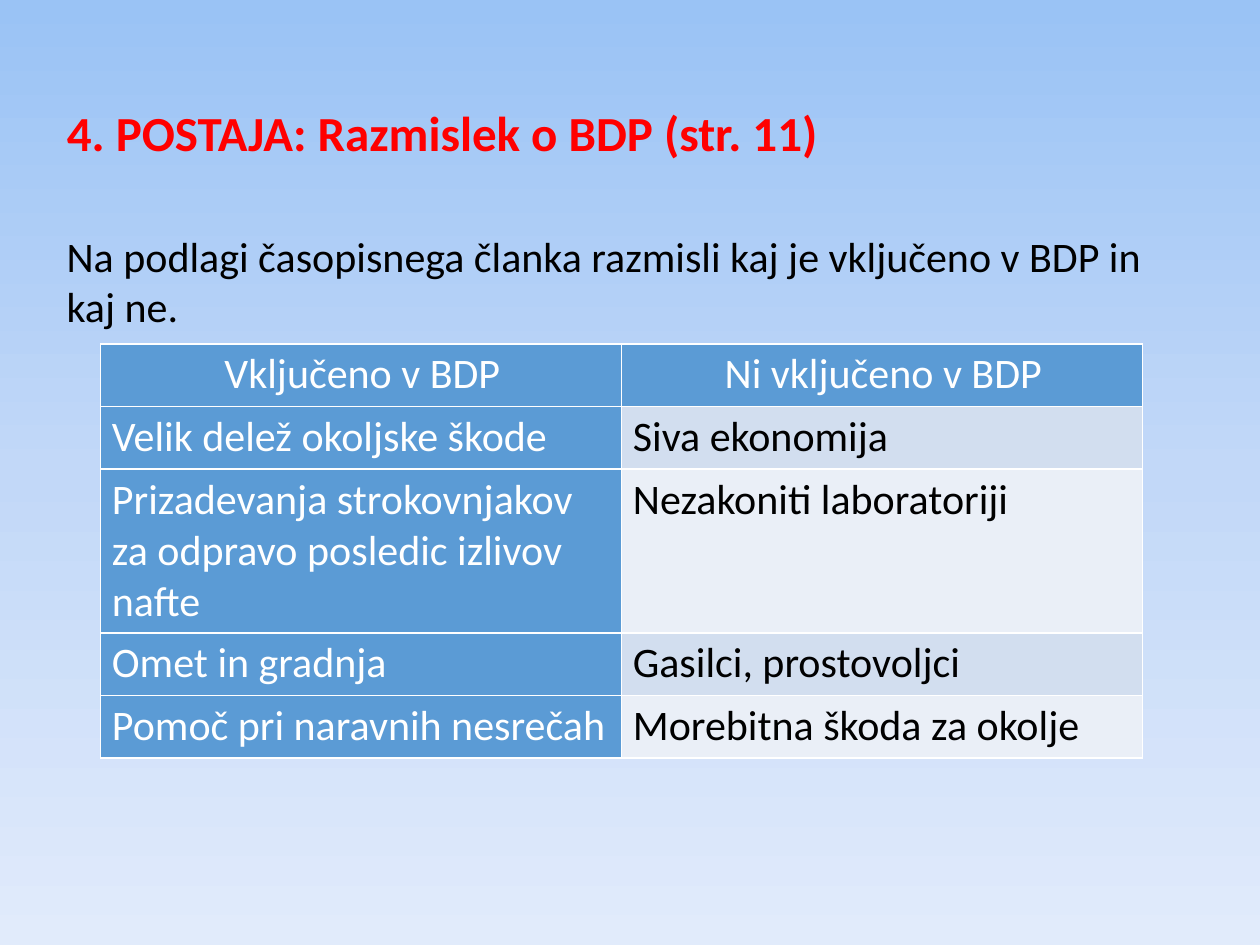
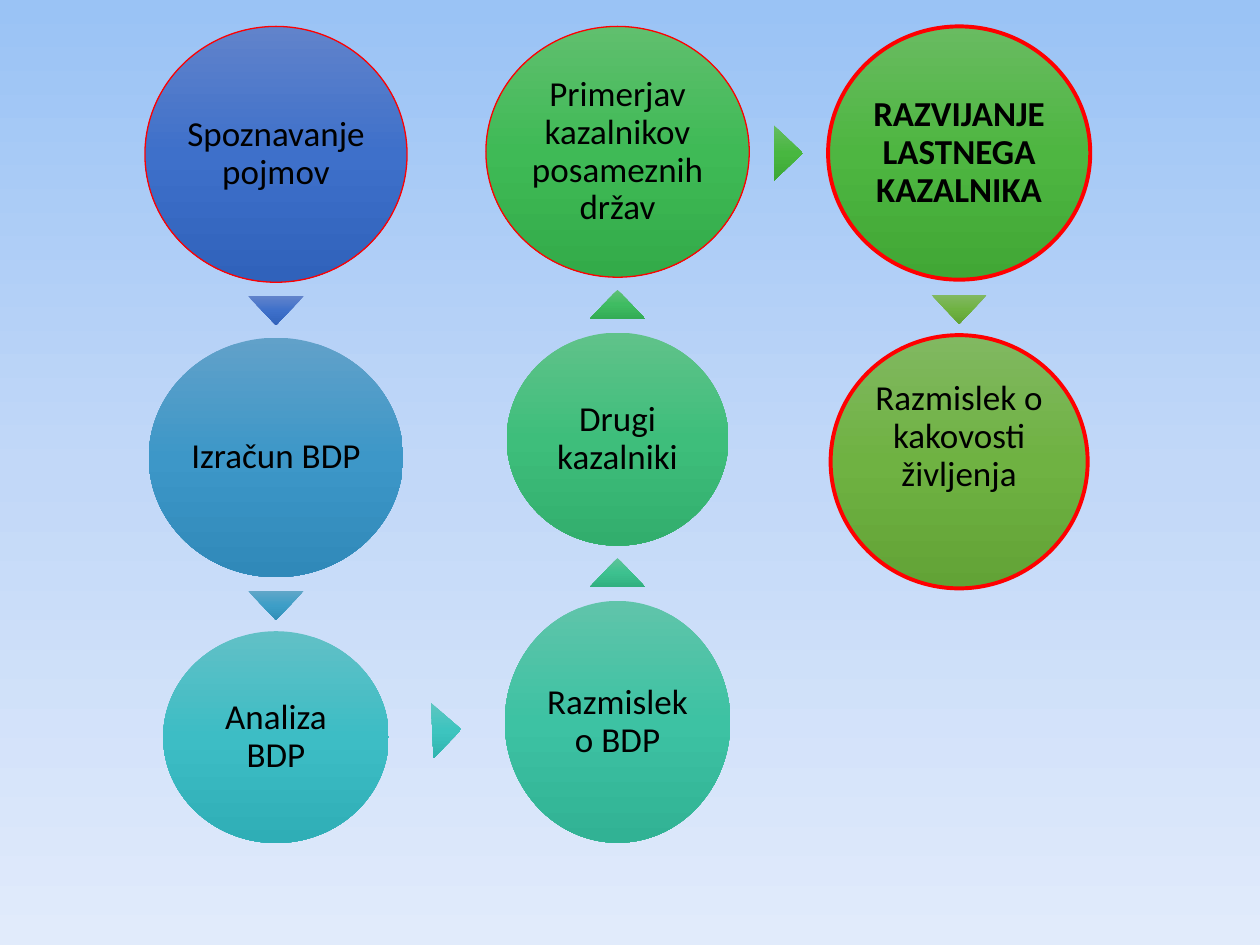
from copy import deepcopy
from dataclasses import dataclass

from lxml import etree
from pptx import Presentation
from pptx.dml.color import RGBColor
from pptx.enum.shapes import MSO_SHAPE
from pptx.enum.text import MSO_ANCHOR, MSO_AUTO_SIZE, PP_ALIGN
from pptx.oxml.ns import qn
from pptx.util import Pt

OVAL = MSO_SHAPE.OVAL
ARROW = MSO_SHAPE.ISOSCELES_TRIANGLE
TOP, MIDDLE = MSO_ANCHOR.TOP, MSO_ANCHOR.MIDDLE
LEFT, CENTER = PP_ALIGN.LEFT, PP_ALIGN.CENTER
FIXED = MSO_AUTO_SIZE.NONE


@dataclass(frozen=True)
class Theme:
    font: str = "Calibri"
    back: tuple = ("9AC3F5", "C2D8F8", "E1EBFB")
    red: str = "FF0000"
    black: str = "000000"
    white: str = "FFFFFF"
    blue: str = "5B9BD5"
    bands: tuple = ("D2DEEF", "EAEFF7")
    title: int = 28
    body: int = 24
    node: int = 20


THEME = Theme()


def shade(fill, root, tones):
    fill.gradient()
    fill.gradient_angle = 270
    grad = root.find(".//" + qn("a:gradFill"))
    grad.set("rotWithShape", "0")
    stops = grad.find(qn("a:gsLst"))
    stops.insert(1, deepcopy(stops[0]))
    for stop, tone, place in zip(fill.gradient_stops, tones, (0, 0.5, 1)):
        stop.color.rgb = RGBColor.from_string(tone)
        stop.position = place


def write(frame, text, size, color, align=LEFT, bold=False):
    frame.text = text
    frame.word_wrap = True
    para = frame.paragraphs[0]
    para.alignment = align
    font = para.runs[0].font
    font.name = THEME.font
    font.size = Pt(size)
    font.bold = bold
    font.color.rgb = RGBColor.from_string(color)


deck = Presentation()
deck.slide_width, deck.slide_height = Pt(720), Pt(540)
master = deck.slide_master
shade(master.background.fill, master.element, THEME.back)

slide = deck.slides.add_slide(deck.slide_layouts[5])
title = slide.shapes.title
title.left, title.top, title.width, title.height = Pt(31), Pt(54.7), Pt(648), Pt(42)
write(title.text_frame, "4. POSTAJA: Razmislek o BDP (str. 11)",
      THEME.title, THEME.red, bold=True)
title.text_frame.auto_size = FIXED
title.text_frame.vertical_anchor = TOP

task = slide.shapes.add_textbox(Pt(31), Pt(128), Pt(648), Pt(66))
write(task.text_frame,
      "Na podlagi časopisnega članka razmisli kaj je vključeno v BDP in kaj ne.",
      THEME.body, THEME.black)

rows = [
    ("Vključeno v BDP", "Ni vključeno v BDP"),
    ("Velik delež okoljske škode", "Siva ekonomija"),
    ("Prizadevanja strokovnjakov za odpravo posledic izlivov nafte",
     "Nezakoniti laboratoriji"),
    ("Omet in gradnja", "Gasilci, prostovoljci"),
    ("Pomoč pri naravnih nesrečah", "Morebitna škoda za okolje"),
]
table = slide.shapes.add_table(len(rows), 2, Pt(57.5), Pt(196.5),
                               Pt(595.4), Pt(237)).table
table.first_row = table.horz_banding = False
for r, row in enumerate(rows):
    table.rows[r].height = Pt(93.6 if r == 2 else 35.8)
    for c, text in enumerate(row):
        cell = table.cell(r, c)
        cell.margin_left = Pt(6.5)
        cell.margin_right = Pt(5)
        cell.margin_top = cell.margin_bottom = Pt(2.9)
        plain = r > 0 and c == 1
        write(cell.text_frame, text, THEME.body,
              THEME.black if plain else THEME.white, LEFT if r else CENTER)
        props = cell._tc.get_or_add_tcPr()
        for side in ("a:lnL", "a:lnR", "a:lnT", "a:lnB"):
            edge = etree.SubElement(props, qn(side), w=str(Pt(1)))
            paint = etree.SubElement(edge, qn("a:solidFill"))
            etree.SubElement(paint, qn("a:srgbClr"), val=THEME.white)
        cell.fill.solid()
        tone = THEME.bands[(r - 1) % 2] if plain else THEME.blue
        cell.fill.fore_color.rgb = RGBColor.from_string(tone)

slide = deck.slides.add_slide(deck.slide_layouts[6])
START, PITCH = 157.7, 195.2
nodes = [
    ("Spoznavanje pojmov", 0, 15.1, 149.8, 146.2, 0.75,
     ("6183CB", "3E70CA", "3062BB")),
    ("Izračun BDP", 0, 193, 145.4, 136.8, 0, ("61A1C9", "3D97C8", "3089B9")),
    ("Analiza BDP", 0, 360.7, 128.9, 121, 0, ("61C0C6", "3DBDC5", "2FAEB6")),
    ("Razmislek o BDP", 1, 343.4, 128.9, 138.2, 0,
     ("60C4AA", "3DC2A3", "31B294")),
    ("Drugi kazalniki", 1, 190.1, 126.7, 121.7, 0,
     ("60C28A", "3EBE7B", "32AE6D")),
    ("Primerjav kazalnikov posameznih držav", 1, 15.1, 150.5, 143.3, 0.75,
     ("60BF6E", "3FBA56", "33AB49")),
    ("RAZVIJANJE LASTNEGA KAZALNIKA", 2, 15.1, 149.8, 144.7, 2.25,
     ("69BB61", "4EB641", "41A735")),
    ("Razmislek o kakovosti življenja", 2, 191.5, 146.9, 144.7, 2.25,
     ("81B861", "6FB242", "62A336")),
]
for text, col, top, wide, high, line, tones in nodes:
    node = slide.shapes.add_shape(OVAL, Pt(START + col * PITCH - wide / 2),
                                  Pt(top), Pt(wide), Pt(high))
    node.shadow.inherit = False
    shade(node.fill, node.element, tones)
    if line:
        node.line.color.rgb = RGBColor.from_string(THEME.red)
        node.line.width = Pt(line)
    else:
        node.line.fill.background()
    frame = node.text_frame
    write(frame, text, THEME.node, THEME.black, CENTER, text.isupper())
    frame.paragraphs[0].line_spacing = 0.9
    frame.vertical_anchor = MIDDLE
    frame.margin_left = frame.margin_right = Pt(2)
    frame.margin_top = frame.margin_bottom = Pt(2)
frame.margin_bottom = Pt(30)

WIDE, HIGH = 31.7, 16.6
arrows = [
    (0, 177.5, 180, ("6183CB", "3E70CA", "3062BB")),
    (0, 346, 180, ("61A6C8", "3D9EC7", "308FB8")),
    (0.5, 417.2, 87.4, ("60C6C1", "3DC4BF", "30B5B0")),
    (1, 327.2, 0, ("60C39A", "3DC18F", "31B080")),
    (1, 173.9, 0, ("60C077", "3FBC62", "33AC55")),
    (1.5, 87.5, 90.2, ("65BC61", "48B740", "3CA735")),
    (2, 176.8, 180, ("81B861", "6FB242", "62A336")),
]
for col, mid, turn, tones in arrows:
    arrow = slide.shapes.add_shape(ARROW, Pt(START + col * PITCH - WIDE / 2),
                                   Pt(mid - HIGH / 2), Pt(WIDE), Pt(HIGH))
    arrow.rotation = turn
    arrow.shadow.inherit = False
    arrow.line.fill.background()
    shade(arrow.fill, arrow.element, tones)

deck.save("out.pptx")
